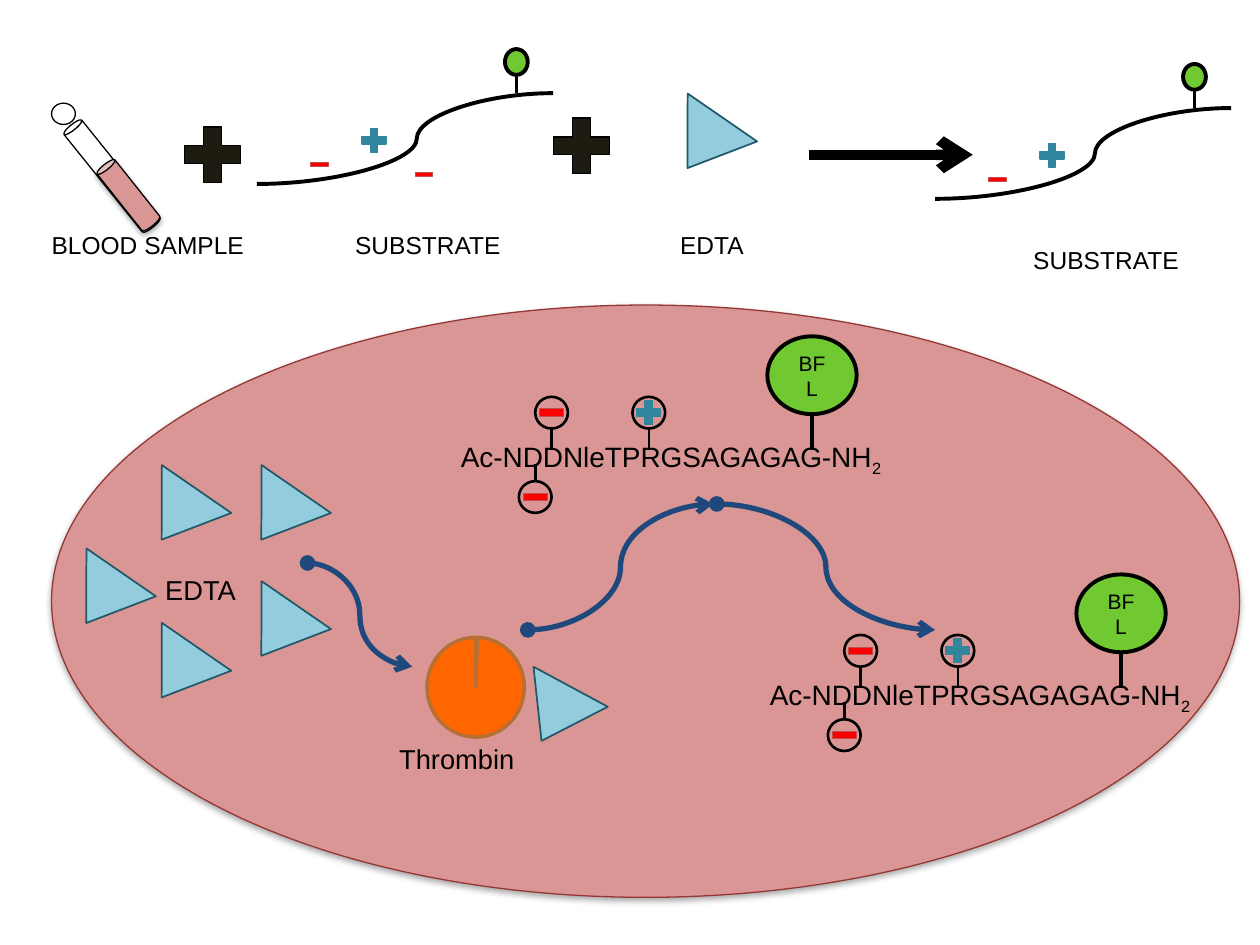
from pptx import Presentation
from pptx.dml.color import RGBColor
from pptx.enum.shapes import MSO_CONNECTOR as Connector, MSO_SHAPE as Shape
from pptx.enum.text import MSO_ANCHOR as Anchor, PP_ALIGN as Align
from pptx.oxml.ns import qn
from pptx.util import Cm, Pt
from lxml.etree import SubElement

BLACK, GREEN, TEAL, RED = "000000", "71C931", "31859C", "FF0000"
RUST, NAVY, BLOOD = "C0504D", "1F497D", "D99694"
FONT = "Arial"
CHARGE_SIZE = (0.66, 0.64)
TRIANGLE_SIZE = (1.7, 1.24)


def color(value):
    return RGBColor.from_string(value)


# Basic parts, all lengths in centimetres
def add_shape(slide, kind, left, top, width, height, fill=None, line=BLACK,
              weight=0.75, rotation=0, shadow=False):
    shape = slide.shapes.add_shape(kind, Cm(left), Cm(top), Cm(width), Cm(height))
    if fill:
        shape.fill.solid()
        shape.fill.fore_color.rgb = color(fill)
    else:
        shape.fill.background()
    shape.line.color.rgb = color(line)
    shape.line.width = Pt(weight)
    shape.rotation = rotation
    if not shadow:  # otherwise the theme's soft shadow stays
        shape.shadow.inherit = False
    return shape


def add_line(slide, start, end, weight, line=BLACK, kind=Connector.STRAIGHT,
             head=None, tail=None, bend=None):
    connector = slide.shapes.add_connector(kind, *map(Cm, (*start, *end)))
    connector.line.color.rgb = color(line)
    connector.line.width = Pt(weight)
    properties = connector._element.spPr
    outline = properties.find(qn("a:ln"))
    for tag, end_type in (("a:headEnd", head), ("a:tailEnd", tail)):
        if end_type:
            SubElement(outline, qn(tag), type=end_type)
    if bend:
        guides = properties.find(qn("a:prstGeom")).find(qn("a:avLst"))
        SubElement(guides, qn("a:gd"), name="adj1", fmla=f"val {round(bend * 100000)}")
    SubElement(properties, qn("a:effectLst"))


def format_paragraph(paragraph, size, align):
    paragraph.alignment = align
    paragraph.font.name = FONT
    paragraph.font.size = Pt(size)
    paragraph.font.color.rgb = color(BLACK)


def add_text(slide, text, left, top, width, height=0.86, size=14,
             align=Align.LEFT, anchor=Anchor.TOP):
    box = slide.shapes.add_textbox(Cm(left), Cm(top), Cm(width), Cm(height))
    frame = box.text_frame
    frame.word_wrap = True
    frame.vertical_anchor = anchor
    paragraph = frame.paragraphs[0]
    paragraph.add_run().text = text
    format_paragraph(paragraph, size, align)
    return paragraph


def add_centred_label(slide, text, left, top):
    add_text(slide, text, left, top, 5.21, 1.63, 15.6, Align.CENTER, Anchor.MIDDLE)


def add_minus(slide, left, top, width, height):
    add_shape(slide, Shape.MATH_MINUS, left, top, width, height, RED, RUST, 0.5)


def add_plus(slide, left, top):
    add_shape(slide, Shape.MATH_PLUS, left, top, *CHARGE_SIZE, TEAL, TEAL)


def add_big_plus(slide, left, top):
    add_shape(slide, Shape.MATH_PLUS, left, top, 1.55, 1.52, "1E1C11")


def add_edta(slide, left, top, rotation=214.6):
    triangle = add_shape(slide, Shape.FLOWCHART_MERGE, left, top, *TRIANGLE_SIZE,
                         "93CDDD", "215968", 1, rotation)
    triangle._element.spPr.find(qn("a:xfrm")).set("flipV", "1")


# Regions, each placed from its top left corner
def add_blood_tube(slide, left, top):
    add_shape(slide, Shape.CAN, left + 0.99, top + 0.15, 0.46, 2.64, rotation=321.2)
    add_shape(slide, Shape.OVAL, left, top, 0.48, 0.43, "FFFFFF")
    add_shape(slide, Shape.CAN, left + 1.32, top + 1.07, 0.46, 1.57, BLOOD,
              rotation=321.5, shadow=True)
    add_text(slide, "BLOOD SAMPLE", left - 0.25, top + 2.44, 5.28)


def add_substrate(slide, left, top):
    add_text(slide, "SUBSTRATE", left + 1.73, top + 3.53, 4.17)
    add_line(slide, (left, top + 2.72), (left + 5.97, top + 0.89), 2.25,
             kind=Connector.CURVE, bend=0.54)
    add_plus(slide, left + 2.03, top + 1.52)
    add_minus(slide, left + 1.02, top + 2.16, 0.48, 0.33)
    add_shape(slide, Shape.OVAL, left + 5, top, 0.46, 0.52, GREEN, weight=2.25)
    add_line(slide, (left + 5.23, top + 0.52), (left + 5.23, top + 0.89), 2)


def add_peptide(slide, left, top):
    # Fluorescent label
    label = add_shape(slide, Shape.OVAL, left + 6.43, top, 1.8, 1.57, GREEN, weight=2.25)
    label.text_frame.word_wrap = True
    label.text_frame.vertical_anchor = Anchor.MIDDLE
    label.text_frame.text = "BFL"
    format_paragraph(label.text_frame.paragraphs[0], 12, Align.CENTER)
    add_line(slide, (left + 7.32, top + 1.55), (left + 7.32, top + 2.29), 2.25)

    # Charged side chains: position, sign, ends of the stem
    width, height = CHARGE_SIZE
    for x, y, positive, stem_start, stem_end in (
            (3.71, 1.22, True, 1.85, 2.29),
            (1.75, 1.22, False, 1.85, 2.29),
            (1.42, 2.92, False, 2.92, 2.57)):
        if positive:
            add_plus(slide, left + x, top + y)
        else:
            add_minus(slide, left + x, top + y, width, height)
        add_shape(slide, Shape.OVAL, left + x, top + y, width, height, weight=1.5)
        middle = left + x + width / 2
        add_line(slide, (middle, top + stem_start), (middle, top + stem_end), 1.5)

    # Sequence
    sequence = add_text(slide, "Ac-NDDNleTPRGSAGAGAG-NH", left, top + 1.96, 10.92, 1.63, 16)
    subscript = sequence.add_run()
    subscript.text = "2"
    subscript.font._element.set("baseline", "-25000")


def add_thrombin(slide, left, top):
    pie = add_shape(slide, Shape.PIE, left, top, 1.96, 2.01, "FF6600", "B76F34", 2)
    pie.adjustments[0], pie.adjustments[1] = 163.27, 162
    add_centred_label(slide, "Thrombin ", left - 1.93, top + 1.63)
    add_edta(slide, left + 1.75, top + 0.92, 208.3)


def add_edta_cluster(slide, left, top):
    for x, y in ((1.52, 0), (3.53, 0), (3.53, 2.34), (1.52, 3.18), (0, 1.68)):
        add_edta(slide, left + x, top + y)
    add_centred_label(slide, "EDTA", left + 0.2, top + 1.32)


def add_reaction_row(slide, left, top):
    add_blood_tube(slide, left, top + 1.09)
    add_big_plus(slide, left + 2.47, top + 1.37)
    add_substrate(slide, left + 4.14, top)
    add_minus(slide, left + 7.27, top + 2.36, 0.48, 0.33)
    add_big_plus(slide, left + 9.91, top + 1.19)
    add_edta(slide, left + 12.32, top + 1.27)
    add_text(slide, "EDTA", left + 12.42, top + 3.53, 1.96)
    add_line(slide, (left + 15.27, top + 2.13), (left + 18.57, top + 2.13), 6, tail="arrow")
    add_substrate(slide, left + 17.81, top + 0.3)


def add_sample_view(slide, left, top):
    add_shape(slide, Shape.OVAL, left, top, 23.95, 11.94, BLOOD, "953735", shadow=True)
    for x1, y1, x2, y2 in ((13.41, 4.01, 17.81, 6.55),
                           (9.6, 6.55, 13.34, 4.01),
                           (5.16, 5.2, 7.27, 7.29)):
        add_line(slide, (left + x1, top + y1), (left + x2, top + y2), 3, NAVY,
                 Connector.CURVE, "oval", "arrow")
    for x, y in ((8, 0.63), (14.23, 5.43)):
        add_peptide(slide, left + x, top + y)
    add_thrombin(slide, left + 7.57, top + 6.7)
    add_edta_cluster(slide, left + 0.2, top + 3.6)


def main():
    presentation = Presentation()
    presentation.slide_width, presentation.slide_height = Cm(25.4), Cm(19.05)
    slide = presentation.slides.add_slide(presentation.slide_layouts[6])
    add_reaction_row(slide, 1.04, 0.99)
    add_sample_view(slide, 1.04, 6.15)
    presentation.save("out.pptx")


if __name__ == "__main__":
    main()
